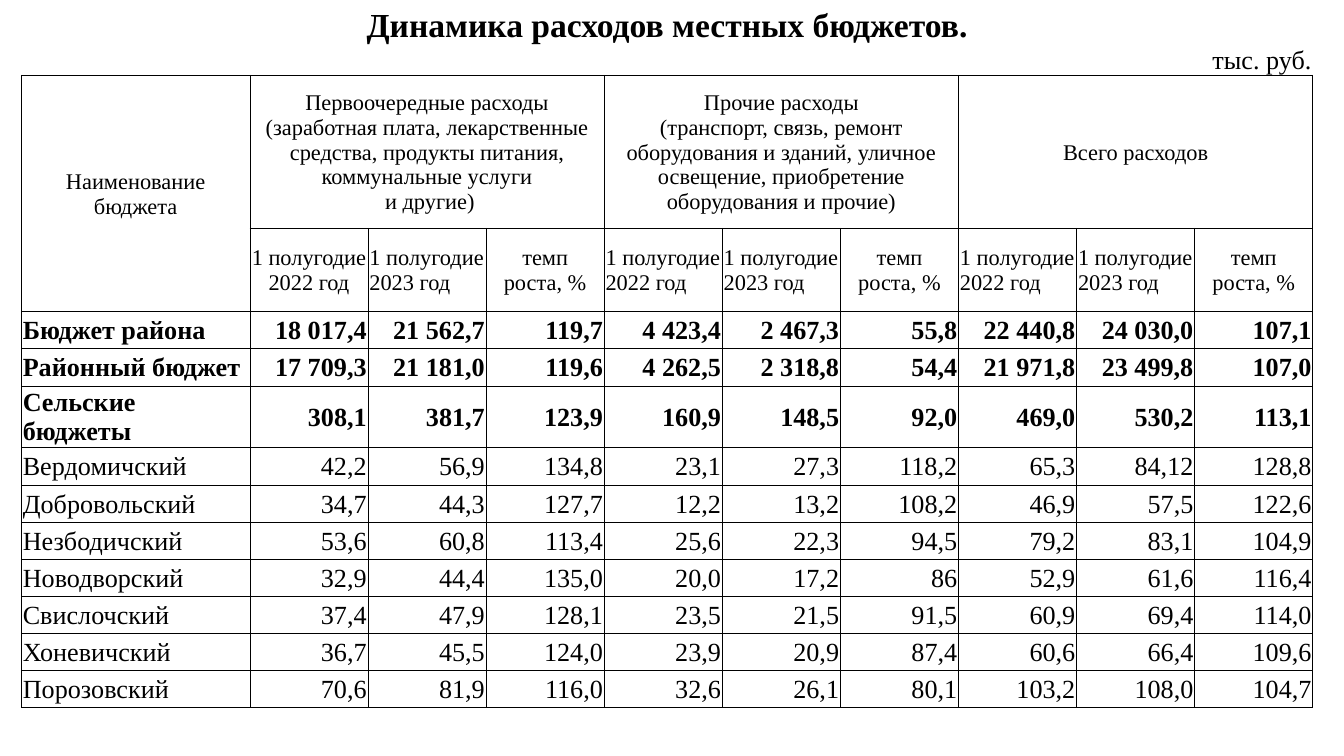
from dataclasses import dataclass

from lxml.etree import SubElement
from pptx import Presentation
from pptx.dml.color import RGBColor
from pptx.enum.text import MSO_ANCHOR as Anchor, PP_ALIGN as Align
from pptx.oxml.ns import qn
from pptx.table import Table, _Cell as Cell
from pptx.util import Inches, Pt

BLACK = RGBColor(0x00, 0x00, 0x00)
FONT = "Times New Roman"
NO_STYLE = "{2D5ABB26-0587-4C30-8999-92F81FD0307C}"
ALL_SIDES = "LRTB"

# Grid, in inches
SLIDE_WIDTH = 10
SLIDE_HEIGHT = SLIDE_WIDTH * 9 / 16
LEFT, TOP, WIDTH = 0.16, 0.03, 9.61
NAME_WIDTH = 1.7
VALUE_COLUMNS = 9
VALUE_WIDTH = (WIDTH - NAME_WIDTH) / VALUE_COLUMNS
ROW_HEIGHT = 2.49 / 9
TALL_ROW_HEIGHT = 0.46
HEAD_HEIGHTS = [0.3, 0.23, 1.14, 0.62]
TITLE_ROW, UNIT_ROW, GROUP_ROW, PERIOD_ROW = range(4)
CELL_FORMAT = {
    "margin_left": Inches(0.01),
    "margin_right": Inches(0.01),
    "margin_top": Inches(0.01),
    "margin_bottom": 0,
}


@dataclass(frozen=True)
class Style:
    size: int
    align: Align = Align.LEFT
    bold: bool = False
    anchor: Anchor = Anchor.MIDDLE


@dataclass(frozen=True)
class Budget:
    name: str
    values: str
    bold: bool = False
    height: float = ROW_HEIGHT


TITLE = Style(18, Align.CENTER, True, Anchor.BOTTOM)
UNIT = Style(14, Align.RIGHT, anchor=Anchor.BOTTOM)
HEAD = Style(12, Align.CENTER)
HEAD_LEFT = Style(12)

GROUPS = [
    "Первоочередные расходы (заработная плата, лекарственные средства, "
    "продукты питания, коммунальные услуги\n и другие)",
    "Прочие расходы\n(транспорт, связь, ремонт оборудования и зданий, уличное "
    "освещение, приобретение оборудования и прочие)",
    "Всего расходов",
]
PERIODS = ["1 полугодие 2022 год", "1 полугодие 2023 год", "темп\nроста, %"]

BUDGETS = [
    Budget("Бюджет района", "18 017,4|21 562,7|119,7|4 423,4|2 467,3|55,8|22 440,8|24 030,0|107,1", True),
    Budget("Районный бюджет", "17 709,3|21 181,0|119,6|4 262,5|2 318,8|54,4|21 971,8|23 499,8|107,0", True),
    Budget("Сельские бюджеты", "308,1|381,7|123,9|160,9|148,5|92,0|469,0|530,2|113,1", True, TALL_ROW_HEIGHT),
    Budget("Вердомичский", "42,2|56,9|134,8|23,1|27,3|118,2|65,3|84,12|128,8"),
    Budget("Добровольский", "34,7|44,3|127,7|12,2|13,2|108,2|46,9|57,5|122,6"),
    Budget("Незбодичский", "53,6|60,8|113,4|25,6|22,3|94,5|79,2|83,1|104,9"),
    Budget("Новодворский", "32,9|44,4|135,0|20,0|17,2|86|52,9|61,6|116,4"),
    Budget("Свислочский", "37,4|47,9|128,1|23,5|21,5|91,5|60,9|69,4|114,0"),
    Budget("Хоневичский", "36,7|45,5|124,0|23,9|20,9|87,4|60,6|66,4|109,6"),
    Budget("Порозовский", "70,6|81,9|116,0|32,6|26,1|80,1|103,2|108,0|104,7"),
]


def set_borders(cell: Cell, sides: str) -> None:
    """Draw thin black lines on the given sides and none on the others."""
    properties = cell._tc.get_or_add_tcPr()
    for side in ALL_SIDES:
        line = SubElement(properties, qn(f"a:ln{side}"), w=str(Pt(0.5)))
        if side in sides:
            fill = SubElement(line, qn("a:solidFill"))
            SubElement(fill, qn("a:srgbClr"), val=str(BLACK))
        else:
            SubElement(line, qn("a:noFill"))


def write(cell: Cell, text: str, style: Style) -> None:
    cell.vertical_anchor = style.anchor
    font_format = {"name": FONT, "size": Pt(style.size), "bold": style.bold}
    for index, line in enumerate(text.split("\n")):
        frame = cell.text_frame
        paragraph = frame.add_paragraph() if index else frame.paragraphs[0]
        paragraph.alignment = style.align
        run = paragraph.add_run()
        run.text = line
        for attribute, value in font_format.items():
            setattr(run.font, attribute, value)
        run.font.color.rgb = BLACK


def shrink_empty(cell: Cell, size: int) -> None:
    """Keep an empty cell from making its row taller."""
    paragraph = cell.text_frame.paragraphs[0]
    SubElement(paragraph._p, qn("a:endParaRPr"), sz=str(size * 100))


def format_cells(table: Table) -> None:
    row_sides = {TITLE_ROW: "", UNIT_ROW: "B"}
    for row_index, row in enumerate(table.rows):
        for cell in row.cells:
            set_borders(cell, row_sides.get(row_index, ALL_SIDES))
            cell.fill.background()
            for attribute, value in CELL_FORMAT.items():
                setattr(cell, attribute, value)


def fill_head(table: Table) -> None:
    # Title and unit
    table.cell(TITLE_ROW, 0).merge(table.cell(TITLE_ROW, VALUE_COLUMNS))
    write(table.cell(TITLE_ROW, 0), "Динамика расходов местных бюджетов.", TITLE)
    for column in (1, 3, 5):
        table.cell(UNIT_ROW, column).merge(table.cell(UNIT_ROW, column + 1))
    for column in range(VALUE_COLUMNS):
        shrink_empty(table.cell(UNIT_ROW, column), 10)
    write(table.cell(UNIT_ROW, VALUE_COLUMNS), "тыс. руб.", UNIT)

    # Column headings
    table.cell(GROUP_ROW, 0).merge(table.cell(PERIOD_ROW, 0))
    write(table.cell(GROUP_ROW, 0), "Наименование бюджета", HEAD)
    for group_index, group in enumerate(GROUPS):
        first = 1 + group_index * len(PERIODS)
        last = first + len(PERIODS) - 1
        table.cell(GROUP_ROW, first).merge(table.cell(GROUP_ROW, last))
        write(table.cell(GROUP_ROW, first), group, HEAD)
        for column, period in enumerate(PERIODS, first):
            centred = column in (1, last)
            write(table.cell(PERIOD_ROW, column), period, HEAD if centred else HEAD_LEFT)


def fill_budgets(table: Table) -> None:
    for row, budget in enumerate(BUDGETS, len(HEAD_HEIGHTS)):
        write(table.cell(row, 0), budget.name, Style(14, bold=budget.bold))
        for column, value in enumerate(budget.values.split("|"), 1):
            write(table.cell(row, column), value, Style(14, Align.RIGHT, budget.bold))


def main() -> None:
    presentation = Presentation()
    presentation.slide_width = Inches(SLIDE_WIDTH)
    presentation.slide_height = Inches(SLIDE_HEIGHT)
    slide = presentation.slides.add_slide(presentation.slide_layouts[6])

    # Table of expenses
    heights = HEAD_HEIGHTS + [budget.height for budget in BUDGETS]
    widths = [NAME_WIDTH] + [VALUE_WIDTH] * VALUE_COLUMNS
    frame = slide.shapes.add_table(
        len(heights), len(widths),
        Inches(LEFT), Inches(TOP), Inches(WIDTH), Inches(sum(heights)),
    )
    expenses = frame.table
    expenses._tbl.tblPr.find(qn("a:tableStyleId")).text = NO_STYLE
    expenses.first_row = expenses.horz_banding = False
    for row, height in zip(expenses.rows, heights):
        row.height = Inches(height)
    for column, width in zip(expenses.columns, widths):
        column.width = Inches(width)

    format_cells(expenses)
    fill_head(expenses)
    fill_budgets(expenses)
    presentation.save("out.pptx")


if __name__ == "__main__":
    main()
